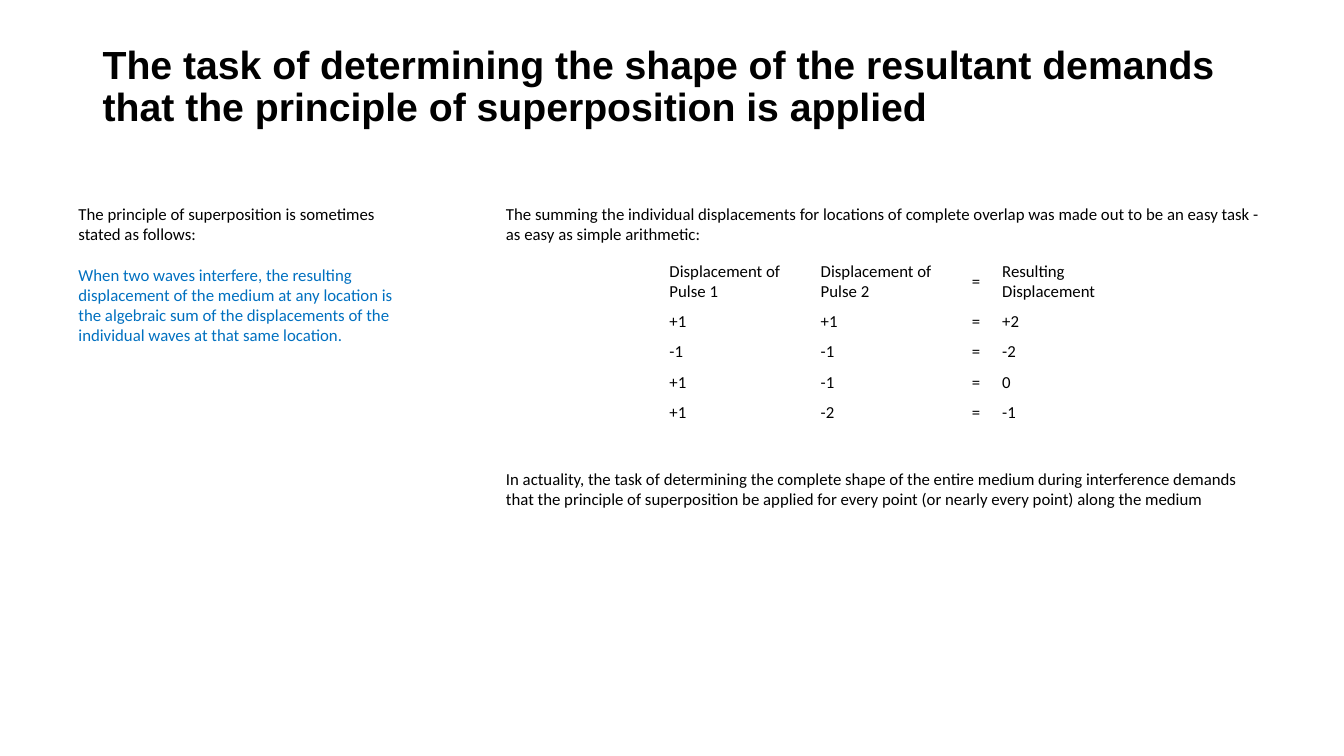
from pptx import Presentation
from pptx.dml.color import RGBColor
from pptx.enum.text import MSO_ANCHOR
from pptx.util import Pt

PX = 9144  # EMU per px, 100 px to the inch
BLACK = RGBColor(0x00, 0x00, 0x00)
BLUE = RGBColor(0x00, 0x70, 0xC0)
WHITE = RGBColor(0xFF, 0xFF, 0xFF)

BODY = {"name": "Calibri", "size": Pt(12)}
HEAD = {"name": "Arial", "size": Pt(28), "bold": True}

TITLE = ("The task of determining the shape of the resultant demands "
         "that the principle of superposition is applied")
INTRO = "The principle of superposition is sometimes stated as follows:"
RULE = ("When two waves interfere, the resulting displacement of the medium "
        "at any location is the algebraic sum of the displacements of the "
        "individual waves at that same location.")
SUM = ("The summing the individual displacements for locations of complete "
       "overlap was made out to be an easy task - as easy as simple arithmetic:")
CLOSE = ("In actuality, the task of determining the complete shape of the "
         "entire medium during interference demands that the principle of "
         "superposition be applied for every point (or nearly every point) "
         "along the medium")
PULSES = [
    ("Displacement of Pulse 1", "Displacement of Pulse 2", "=",
     "Resulting Displacement"),
    ("+1", "+1", "=", "+2"),
    ("-1", "-1", "=", "-2"),
    ("+1", "-1", "=", "0"),
    ("+1", "-2", "=", "-1"),
]


def style(par, form, color=BLACK):
    for key, value in form.items():
        setattr(par.font, key, value)
    par.font.color.rgb = color


def add_text(slide, area, lines, form=BODY, **layout):
    """Add a text box; lines holds pairs of text and colour."""
    box = slide.shapes.add_textbox(*(n * PX for n in area))
    frame = box.text_frame
    frame.word_wrap = True
    for i, (text, color) in enumerate(lines):
        par = frame.add_paragraph() if i else frame.paragraphs[0]
        par.text = text
        style(par, form, color)
        if i:
            par.space_before = Pt(14.6)  # one line of body text
        for key, value in layout.items():
            setattr(par, key, value)


def add_grid(slide, left, top, widths, heights, rows):
    area = (left, top, sum(widths), sum(heights))
    grid = slide.shapes.add_table(len(rows), len(widths),
                                  *(n * PX for n in area)).table
    grid.first_row = grid.horz_banding = False
    for col, width in zip(grid.columns, widths):
        col.width = width * PX
    for row, height, texts in zip(grid.rows, heights, rows):
        row.height = height * PX
        for cell, text in zip(row.cells, texts):
            cell.text = text
            cell.vertical_anchor = MSO_ANCHOR.MIDDLE
            cell.fill.solid()
            cell.fill.fore_color.rgb = WHITE
            style(cell.text_frame.paragraphs[0], BODY)


def main():
    deck = Presentation()
    deck.slide_width, deck.slide_height = 1333 * PX, 750 * PX
    slide = deck.slides.add_slide(deck.slide_layouts[6])

    # Title
    add_text(slide, (92, 40, 1150, 145), [(TITLE, BLACK)], HEAD,
             line_spacing=0.9)

    # Left column: the principle
    add_text(slide, (68, 197, 350, 184), [(INTRO, BLACK), (RULE, BLUE)])

    # Right column: sums of pulses
    add_text(slide, (492, 197, 774, 57), [(SUM, BLACK)])
    add_grid(slide, 654, 254, (150, 150, 30, 120), (50, 30, 30, 30, 30), PULSES)
    add_text(slide, (492, 460, 774, 184), [(CLOSE, BLACK)])

    deck.save("out.pptx")


if __name__ == "__main__":
    main()
